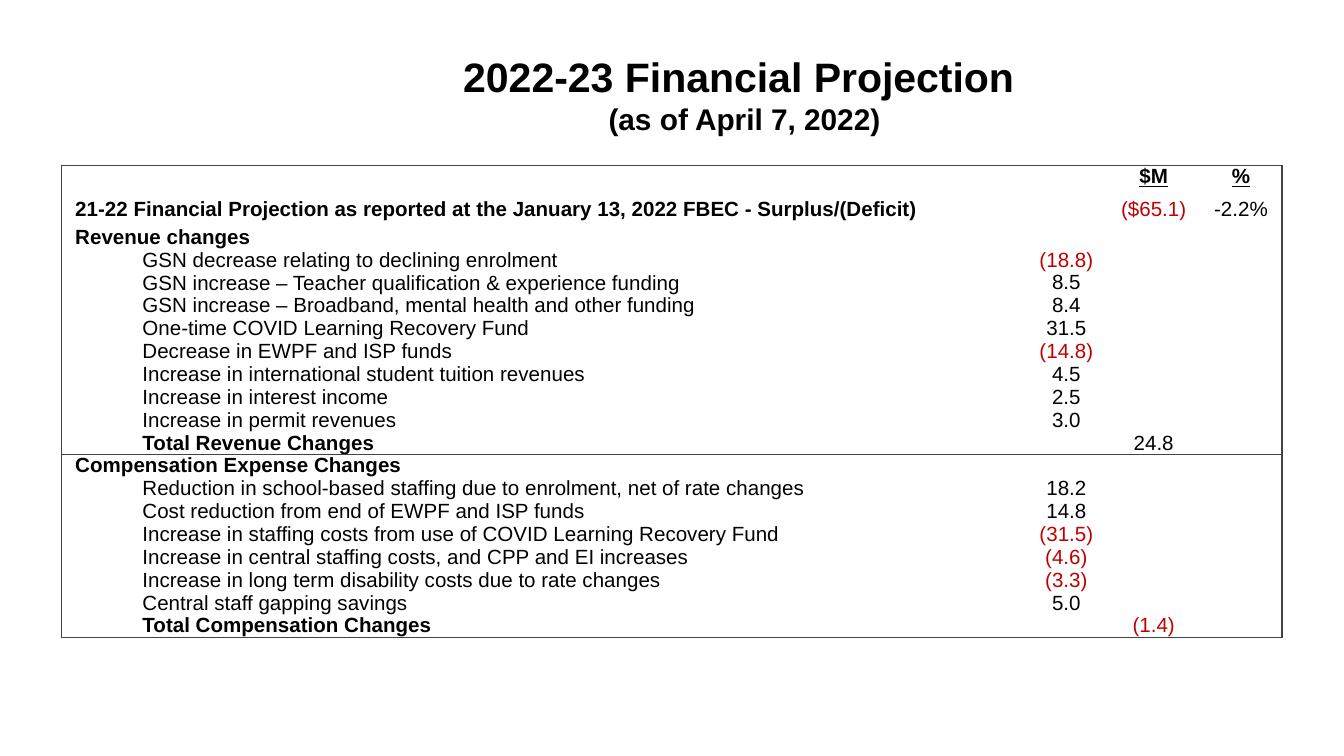
from lxml.etree import SubElement
from pptx import Presentation
from pptx.dml.color import RGBColor
from pptx.enum.text import MSO_ANCHOR, MSO_AUTO_SIZE, PP_ALIGN
from pptx.oxml.ns import qn
from pptx.util import Inches, Pt

BLACK = RGBColor(0x00, 0x00, 0x00)
RED = RGBColor(0xC0, 0x00, 0x00)
BORDER = RGBColor(0x43, 0x43, 0x43)
FONT = "Arial"
BODY_SIZE = 11
LINE_HEIGHT = 0.17
COLUMNS = [7.17, 0.61, 0.69, 0.61]
PLAIN_STYLE = "{2D5ABB26-0587-4C30-8999-92F81FD0307C}"

HEADINGS = ["", "", "$M", "%"]
OPENING = [
    "21-22 Financial Projection as reported at the January 13, 2022 FBEC - Surplus/(Deficit)",
    "", "($65.1)", "-2.2%",
]
REVENUE = ("Revenue changes", [
    ("GSN decrease relating to declining enrolment", "(18.8)"),
    ("GSN increase – Teacher qualification & experience funding", "8.5"),
    ("GSN increase – Broadband, mental health and other funding", "8.4"),
    ("One-time COVID Learning Recovery Fund", "31.5"),
    ("Decrease in EWPF and ISP funds", "(14.8)"),
    ("Increase in international student tuition revenues", "4.5"),
    ("Increase in interest income", "2.5"),
    ("Increase in permit revenues", "3.0"),
], "Total Revenue Changes", "24.8")
COMPENSATION = ("Compensation Expense Changes", [
    ("Reduction in school-based staffing due to enrolment, net of rate changes", "18.2"),
    ("Cost reduction from end of EWPF and ISP funds", "14.8"),
    ("Increase in staffing costs from use of COVID Learning Recovery Fund", "(31.5)"),
    ("Increase in central staffing costs, and CPP and EI increases", "(4.6)"),
    ("Increase in long term disability costs due to rate changes", "(3.3)"),
    ("Central staff gapping savings", "5.0"),
], "Total Compensation Changes", "(1.4)")


def format_run(run, size, bold=False, color=BLACK, underline=False):
    run.font.name = FONT
    run.font.size = Pt(size)
    run.font.bold = bold
    run.font.underline = underline
    run.font.color.rgb = color


def add_title(slide):
    title = slide.shapes.title
    title.left, title.top = Inches(1.62), Inches(0.17)
    title.width, title.height = Inches(7.84), Inches(1.06)
    frame = title.text_frame
    frame.auto_size = MSO_AUTO_SIZE.NONE
    frame.vertical_anchor = MSO_ANCHOR.MIDDLE
    frame.margin_left = frame.margin_right = Inches(0.1)
    frame.margin_top = frame.margin_bottom = Inches(0.1)
    heading = frame.paragraphs[0]
    heading.text = "2022-23 Financial Projection \v(as of April 7, 2022)"
    heading.alignment = PP_ALIGN.CENTER
    for run, size in zip(heading.runs, (22, 16)):
        format_run(run, size, bold=True)
    SubElement(heading._p.find(qn("a:br")), qn("a:rPr"), sz="2200")


def write_lines(cell, lines, bold=(), indented=False, centered=True, underline=False):
    cell.text_frame.text = "\n".join(lines)
    for number, paragraph in enumerate(cell.text_frame.paragraphs):
        paragraph.alignment = PP_ALIGN.CENTER if centered else PP_ALIGN.LEFT
        if indented and number:
            paragraph._p.get_or_add_pPr().set("marL", str(Inches(0.5)))
        for run in paragraph.runs:
            color = RED if centered and run.text.startswith("(") else BLACK
            format_run(run, BODY_SIZE, number in bold, color, underline)
        if not paragraph.runs:
            SubElement(paragraph._p, qn("a:endParaRPr"), sz=str(BODY_SIZE * 100))


def write_section(cells, section):
    name, items, total_name, total = section
    labels = [name, *(label for label, _ in items), total_name]
    write_lines(cells[0], labels, bold=(0, len(labels) - 1), indented=True, centered=False)
    write_lines(cells[1], [amount for _, amount in items])
    cells[1].margin_top = Inches(LINE_HEIGHT)
    write_lines(cells[2], [total])
    cells[2].vertical_anchor = MSO_ANCHOR.BOTTOM
    write_lines(cells[3], [""])


def draw_borders(cell, sides):
    properties = cell._tc.get_or_add_tcPr()
    for side in "LRTB":
        if side in sides:
            line = SubElement(properties, qn(f"a:ln{side}"), w=str(Pt(0.75)))
            fill = SubElement(line, qn("a:solidFill"))
            SubElement(fill, qn("a:srgbClr"), val=str(BORDER))


def add_projection_table(slide):
    sections = [REVENUE, COMPENSATION]
    heights = [0.24, 0.21] + [(len(items) + 2) * LINE_HEIGHT for _, items, _, _ in sections]
    table = slide.shapes.add_table(
        len(heights), len(COLUMNS), Inches(0.46), Inches(1.23),
        Inches(sum(COLUMNS)), Inches(sum(heights))).table
    table.first_row = table.horz_banding = False
    table._tbl.tblPr.find(qn("a:tableStyleId")).text = PLAIN_STYLE
    for column, width in zip(table.columns, COLUMNS):
        column.width = Inches(width)
    for row, height in zip(table.rows, heights):
        row.height = Inches(height)

    grid = [list(row.cells) for row in table.rows]
    for row_number, cells in enumerate(grid):
        for column_number, cell in enumerate(cells):
            cell.margin_left = cell.margin_right = Inches(0.1)
            cell.margin_top = cell.margin_bottom = 0
            sides = "L" if column_number == 0 else ""
            sides += "R" if column_number == len(COLUMNS) - 1 else ""
            sides += "T" if row_number in (0, 3) else ""
            sides += "B" if row_number >= 2 else ""
            draw_borders(cell, sides)
            cell.fill.background()

    for cell, heading in zip(grid[0], HEADINGS):
        write_lines(cell, [heading], bold=(0,), underline=True)
    for number, (cell, entry) in enumerate(zip(grid[1], OPENING)):
        write_lines(cell, [entry], bold=(0,) if number == 0 else (), centered=number > 0)
    for cells, section in zip(grid[2:], sections):
        write_section(cells, section)


def main():
    deck = Presentation()
    deck.slide_width = Inches(10)
    deck.slide_height = deck.slide_width * 9 // 16
    slide = deck.slides.add_slide(deck.slide_layouts[5])
    add_title(slide)
    add_projection_table(slide)
    deck.save("out.pptx")


if __name__ == "__main__":
    main()
